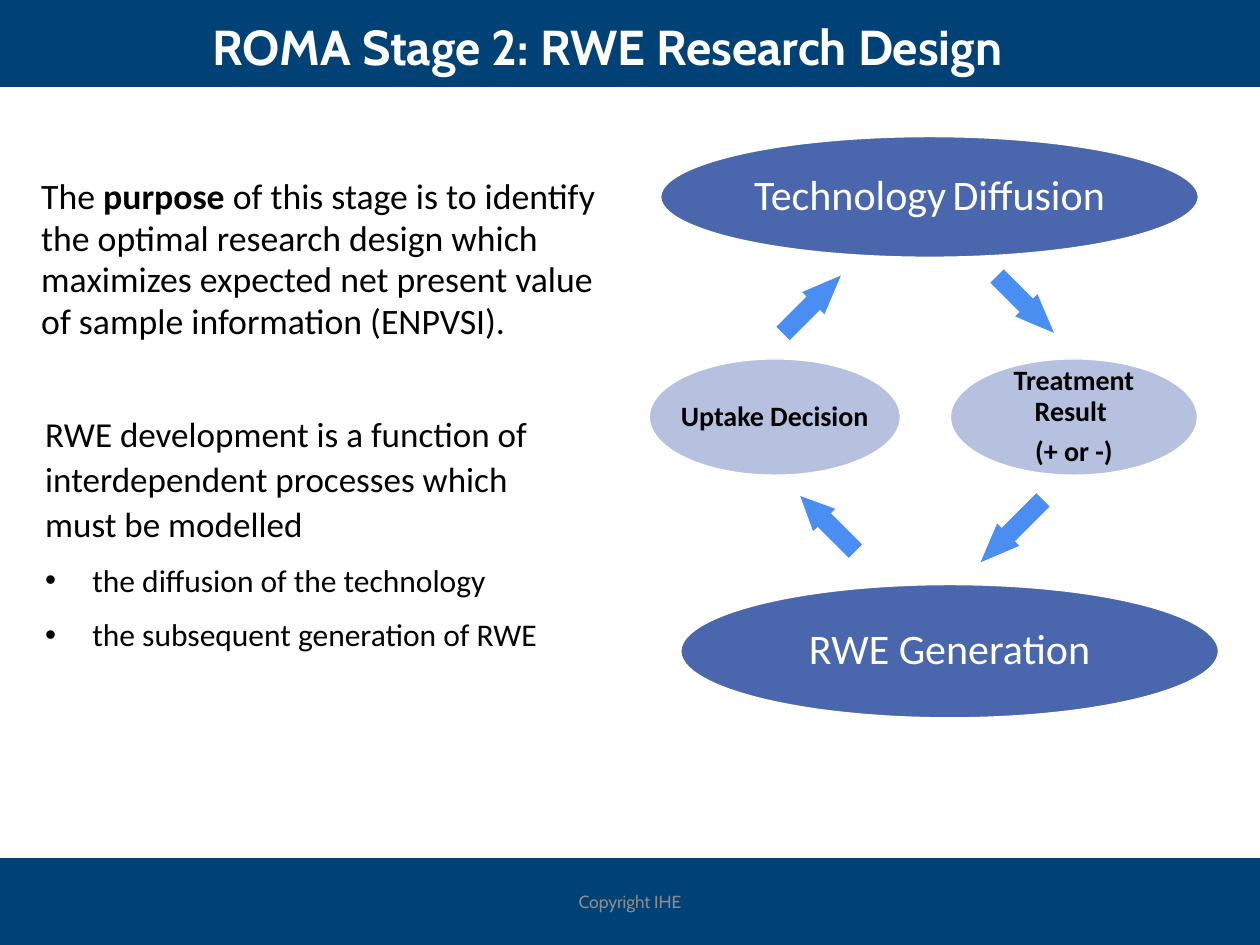
from dataclasses import dataclass

from lxml.etree import SubElement
from pptx import Presentation
from pptx.dml.color import RGBColor
from pptx.enum.shapes import MSO_SHAPE
from pptx.enum.text import MSO_ANCHOR, PP_ALIGN
from pptx.oxml.ns import qn
from pptx.util import Pt


@dataclass(frozen=True)
class Theme:
    navy: str = "004275"
    blue: str = "4A66AC"
    pale: str = "B5C1DF"
    arrow: str = "4A8EF2"
    white: str = "FFFFFF"
    black: str = "000000"
    grey: str = "8C8C8C"
    heading_font: str = "Cabin"
    body_font: str = "Calibri"
    title: float = 28
    process: float = 24
    purpose: float = 20.4
    body: float = 20
    bullet: float = 18
    event: float = 16
    footer: float = 10


theme = Theme()


def add_figure(kind, place, fill):
    shape = page.shapes.add_shape(kind, *map(Pt, place))
    shape.shadow.inherit = False
    shape.fill.solid()
    shape.fill.fore_color.rgb = RGBColor.from_string(fill)
    shape.line.fill.background()
    return shape


def write(para, runs, color, font=theme.body_font, align=PP_ALIGN.LEFT,
          spacing=1.0, after=0):
    """Fill a paragraph with (text, size, bold) runs."""
    para.alignment = align
    para.line_spacing = spacing
    para.space_after = Pt(after)
    for text, size, bold in runs:
        span = para.add_run()
        span.text = text
        span.font.name = font
        span.font.size = Pt(size)
        span.font.bold = bold
        span.font.color.rgb = RGBColor.from_string(color)


deck = Presentation()
deck.slide_width, deck.slide_height = Pt(720), Pt(540)
page = deck.slides.add_slide(deck.slide_layouts[6])

# Top and bottom bands
for top in (0, 490.3):
    add_figure(MSO_SHAPE.RECTANGLE, (0, top, 720, 49.7), theme.navy)

# Title and footer
for place, text, size, bold, color in (
    ((5, 11.5, 684, 29), "ROMA Stage 2: RWE Research Design", theme.title, True, theme.white),
    ((246, 500.5, 228, 29), "Copyright IHE", theme.footer, False, theme.grey),
):
    box = page.shapes.add_textbox(*map(Pt, place))
    box.text_frame.word_wrap = True
    box.text_frame.vertical_anchor = MSO_ANCHOR.MIDDLE
    write(box.text_frame.paragraphs[0], [(text, size, bold)], color,
          theme.heading_font, PP_ALIGN.CENTER)

# Purpose statement
box = page.shapes.add_textbox(Pt(16.5), Pt(97.2), Pt(350.6), Pt(119.5))
box.text_frame.word_wrap = True
write(box.text_frame.paragraphs[0], [
    ("The ", theme.purpose, False),
    ("purpose", theme.purpose, True),
    (" of this stage is to identify the optimal research design which maximizes "
     "expected net present value of sample information (ENPVSI).", theme.purpose, False),
], theme.black, spacing=0.97, after=8)

# Interdependent processes
box = page.shapes.add_textbox(Pt(18.7), Pt(230.4), Pt(310.3), Pt(241.2))
box.text_frame.word_wrap = True
write(box.text_frame.paragraphs[0], [
    ("RWE development is a function of interdependent processes which must be modelled",
     theme.body, False)], theme.black, spacing=1.07, after=8)
for text in ("the diffusion of the technology", "the subsequent generation of RWE"):
    para = box.text_frame.add_paragraph()
    properties = para._p.get_or_add_pPr()
    properties.set("marL", str(Pt(27)))
    properties.set("indent", str(-Pt(27)))
    SubElement(properties, qn("a:buFont"), typeface="Arial")
    SubElement(properties, qn("a:buChar"), char="•")
    write(para, [(text, theme.bullet, False)], theme.black, spacing=1.07, after=8)

# Cycle of processes and events: place, fill, text colour, wrap, paragraphs of runs
stages = (
    ((376.9, 77.4, 308.5, 70.2), theme.blue, theme.white, False,
     [[("Technology", theme.process, False), (" ", theme.event, False),
       ("Diffusion", theme.process, False)]]),
    ((542.5, 204.5, 142.4, 67.7), theme.pale, theme.black, True,
     [[("Treatment Result ", theme.event, True)], [("(+ or -)", theme.event, True)]]),
    ((388.4, 333.4, 308.5, 77.4), theme.blue, theme.white, False,
     [[("RWE Generation", theme.process, False)]]),
    ((370.4, 204.5, 144.7, 67.7), theme.pale, theme.black, False,
     [[("Uptake Decision", theme.event, True)]]),
)
for place, fill, color, wrap, paragraphs in stages:
    oval = add_figure(MSO_SHAPE.OVAL, place, fill)
    oval.line.color.rgb = RGBColor.from_string(theme.white)
    oval.line.width = Pt(2)
    frame = oval.text_frame
    frame.word_wrap = wrap
    frame.vertical_anchor = MSO_ANCHOR.MIDDLE
    frame.margin_left = frame.margin_right = frame.margin_top = frame.margin_bottom = 0
    for index, runs in enumerate(paragraphs):
        para = frame.add_paragraph() if index else frame.paragraphs[0]
        write(para, runs, color, align=PP_ALIGN.CENTER, spacing=0.9,
              after=0.35 * runs[0][1])

# Arrows between the stages
for kind, left, top, width, rotation, head in (
    (MSO_SHAPE.RIGHT_ARROW, 563, 165, 46, 45, 1.24),
    (MSO_SHAPE.LEFT_ARROW, 553, 294.5, 50.4, 315, 1.24),
    (MSO_SHAPE.LEFT_ARROW, 450.7, 290.2, 44.6, 45, 1.08),
    (MSO_SHAPE.RIGHT_ARROW, 440.6, 165, 46.8, 315, 1.24),
):
    arrow = add_figure(kind, (left, top, width, 18), theme.arrow)
    arrow.rotation = rotation
    arrow.adjustments[0] = 0.6
    arrow.adjustments[1] = head

deck.save("out.pptx")
